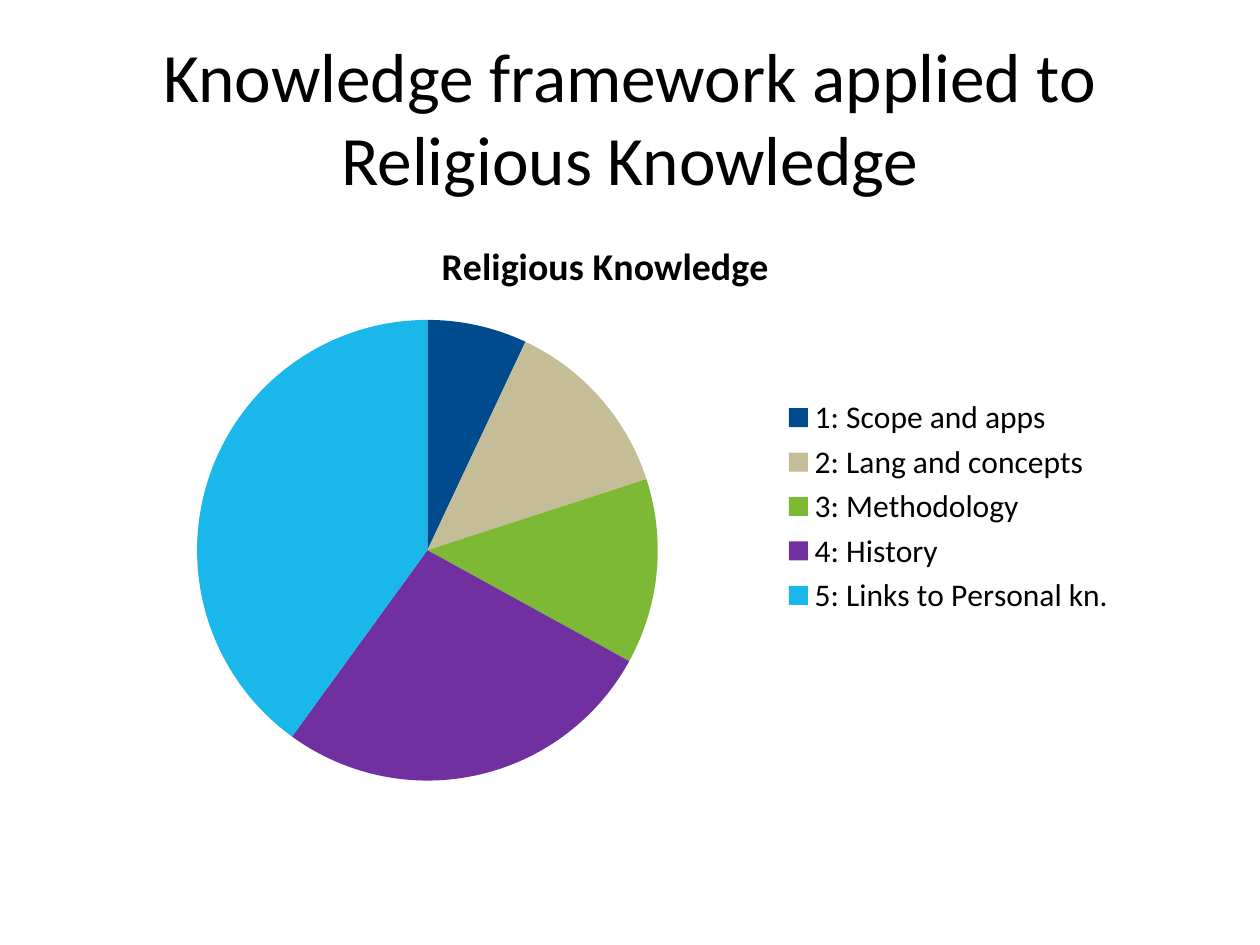
"""Build a slide with a pie chart of the knowledge framework for Religious Knowledge."""
import lxml.etree
import pptx
import pptx.chart.data
import pptx.dml.color
import pptx.enum.chart
import pptx.enum.text
import pptx.oxml
import pptx.oxml.ns
import pptx.util

Pt = pptx.util.Pt
Color = pptx.dml.color.RGBColor.from_string

TITLE = "Knowledge framework applied to Religious Knowledge"
CHART_TITLE = "Religious Knowledge"
SLICES = [
    ("1: Scope and apps", 7, "004B8D"),
    ("2: Lang and concepts", 13, "C4BD97"),
    ("3: Methodology", 13, "7DB935"),
    ("4: History", 27, "7030A0"),
    ("5: Links to Personal kn.", 40, "1AB7EA"),
]
THEME = {"font": "Calibri", "text": "000000", "title": 39.6, "chart_title": 21.6, "body": 18}
SLIDE_SIZE = (720, 540)
TITLE_BOX = (36, 21.6, 648, 90)
CHART_BOX = (46.8, 122.4, 598.3, 334.1)
PIE_LAYOUT = {"x": 0.11, "y": 0.18, "w": 0.44, "h": 0.79}


def style_font(font, size, bold=False):
    font.name = THEME["font"]
    font.size = Pt(THEME[size])
    font.bold = bold
    font.color.rgb = Color(THEME["text"])


def add_title(page):
    box = page.shapes.title
    box.left, box.top, box.width, box.height = map(Pt, TITLE_BOX)
    frame = box.text_frame
    frame.text = TITLE
    frame.word_wrap = True
    frame.auto_size = pptx.enum.text.MSO_AUTO_SIZE.NONE
    frame.vertical_anchor = pptx.enum.text.MSO_ANCHOR.MIDDLE
    para = frame.paragraphs[0]
    para.alignment = pptx.enum.text.PP_ALIGN.CENTER
    style_font(para.font, "title")


def place_pie(chart):
    area = chart.plots[0]._element.getparent()
    for layout in area.findall(pptx.oxml.ns.qn("c:layout")):
        area.remove(layout)
    layout = lxml.etree.Element(pptx.oxml.ns.qn("c:layout"))
    manual = lxml.etree.SubElement(layout, pptx.oxml.ns.qn("c:manualLayout"))
    settings = {"layoutTarget": "inner", "xMode": "edge", "yMode": "edge", **PIE_LAYOUT}
    for name, value in settings.items():
        lxml.etree.SubElement(manual, pptx.oxml.ns.qn(f"c:{name}")).set("val", str(value))
    area.insert(0, layout)


def add_pie(page):
    names, values, colors = zip(*SLICES)
    data = pptx.chart.data.CategoryChartData()
    data.categories = names
    data.add_series(CHART_TITLE, values)
    chart = page.shapes.add_chart(
        pptx.enum.chart.XL_CHART_TYPE.PIE, *map(Pt, CHART_BOX), data
    ).chart
    style_font(chart.font, "body")

    chart.has_title = True
    chart.chart_title.include_in_layout = False
    frame = chart.chart_title.text_frame
    frame.text = CHART_TITLE
    style_font(frame.paragraphs[0].font, "chart_title", bold=True)

    chart.has_legend = True
    chart.legend.position = pptx.enum.chart.XL_LEGEND_POSITION.RIGHT
    chart.legend.include_in_layout = False
    style_font(chart.legend.font, "body")

    plot = chart.plots[0]
    plot.vary_by_categories = True
    for index, color in enumerate(colors):
        fill = plot.series[0].points[index].format.fill
        fill.solid()
        fill.fore_color.rgb = Color(color)
    place_pie(chart)


def main():
    deck = pptx.Presentation()
    deck.slide_width, deck.slide_height = map(Pt, SLIDE_SIZE)
    page = deck.slides.add_slide(deck.slide_layouts.get_by_name("Title Only"))
    add_title(page)
    add_pie(page)
    deck.save("out.pptx")


if __name__ == "__main__":
    main()
